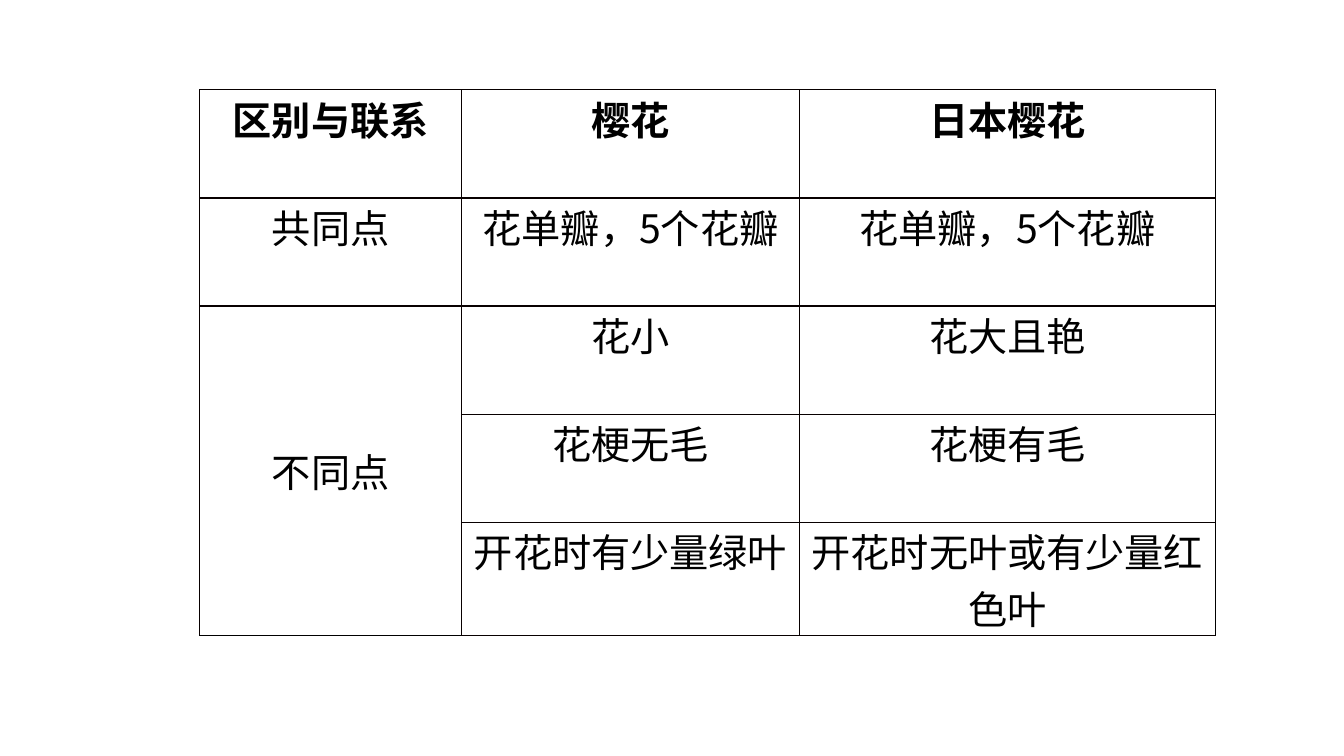
from lxml.etree import SubElement
from pptx import Presentation
from pptx.dml.color import RGBColor
from pptx.enum.text import MSO_ANCHOR, PP_ALIGN
from pptx.oxml.ns import qn
from pptx.util import Pt

FONT = "Noto Sans CJK SC"
COLORS = {"text": "000000", "thin": "000000", "line": "080000"}
WIDTHS = {"thin": 0.75, "line": 1}
COLS = [187.2, 241.2, 297.1]
ROW = 77.3
ROWS = [
    ["区别与联系", "樱花", "日本樱花"],
    ["共同点", "花单瓣，5个花瓣", "花单瓣，5个花瓣"],
    ["不同点", "花小", "花大且艳"],
    ["", "花梗无毛", "花梗有毛"],
    ["", "开花时有少量绿叶", "开花时无叶或有少量红色叶"],
]


def set_text(cell, text, bold):
    cell.text = text
    para = cell.text_frame.paragraphs[0]
    para.alignment = PP_ALIGN.CENTER
    font = para.font
    font.size = Pt(28)
    font.bold = bold
    font.color.rgb = RGBColor.from_string(COLORS["text"])
    font.name = FONT
    props = para._p.pPr.find(qn("a:defRPr"))
    SubElement(props, qn("a:ea"), typeface=FONT)


def set_edges(cell, edges):
    """Draw the borders; edges maps L, R, T and B, in that order, to a line kind."""
    props = cell._tc.get_or_add_tcPr()
    for place, (side, kind) in enumerate(edges.items()):
        line = SubElement(props, qn("a:ln" + side), w=str(Pt(WIDTHS[kind])))
        fill = SubElement(line, qn("a:solidFill"))
        SubElement(fill, qn("a:srgbClr"), val=COLORS[kind])
        props.insert(place, line)


def add_grid(slide):
    frame = slide.shapes.add_table(
        len(ROWS), len(COLS), Pt(142.6), Pt(64.1), Pt(sum(COLS)), Pt(ROW * len(ROWS))
    )
    table = frame.table
    table.first_row = table.horz_banding = False
    for col, width in zip(table.columns, COLS):
        col.width = Pt(width)
    for row in table.rows:
        row.height = Pt(ROW)

    for i, texts in enumerate(ROWS):
        for j, text in enumerate(texts):
            cell = table.cell(i, j)
            cell.margin_left = cell.margin_right = 0
            cell.margin_top = cell.margin_bottom = 0
            cell.fill.background()
            if text:
                set_text(cell, text, bold=i == 0)
            side = "thin" if j == 2 else "line"
            base = "thin" if j == 0 and i >= 2 else "line"
            set_edges(cell, {"L": side, "R": side, "T": "line", "B": base})

    differ = table.cell(2, 0)
    differ.merge(table.cell(4, 0))
    differ.vertical_anchor = MSO_ANCHOR.MIDDLE


def main():
    deck = Presentation()
    deck.slide_width, deck.slide_height = Pt(960), Pt(540)
    add_grid(deck.slides.add_slide(deck.slide_layouts[6]))
    deck.save("out.pptx")


if __name__ == "__main__":
    main()
